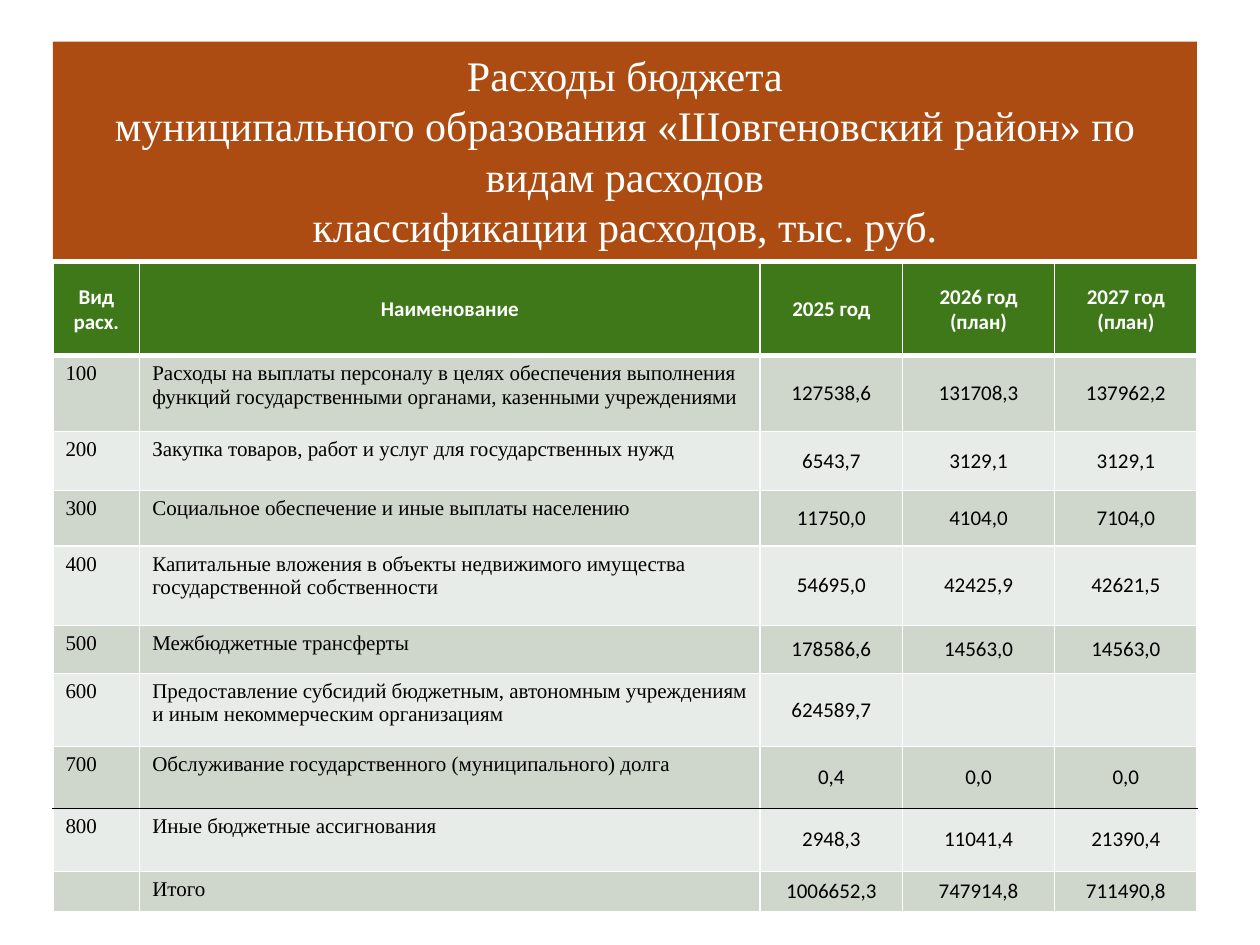
from dataclasses import dataclass

from lxml import etree
from pptx import Presentation
from pptx.dml.color import RGBColor
from pptx.enum.text import MSO_ANCHOR, MSO_AUTO_SIZE, PP_ALIGN
from pptx.oxml.ns import qn
from pptx.util import Inches, Pt

MIDDLE, TOP = MSO_ANCHOR.MIDDLE, MSO_ANCHOR.TOP
CENTER, LEFT = PP_ALIGN.CENTER, PP_ALIGN.LEFT
NO_AUTOFIT = MSO_AUTO_SIZE.NONE
TITLE_ONLY = 5


@dataclass(frozen=True)
class Theme:
    banner: str = "AD4C12"
    header: str = "3F7818"
    bands: tuple = ("CFD6CC", "E8ECE8")
    light: str = "FFFFFF"
    dark: str = "000000"
    serif: str = "Times New Roman"
    sans: str = "Calibri"
    title_size: int = 24
    table_size: int = 12
    thin: int = 1
    thick: int = 3


THEME = Theme()
HEADING = ("Расходы бюджета\vмуниципального образования «Шовгеновский район» "
           "по видам расходов\vклассификации расходов, тыс. руб.")
COLUMNS = ("Вид расх.", "Наименование", "2025 год", "2026 год\n(план)", "2027 год (план)")
EXPENSES = (
    ("100", "Расходы на выплаты персоналу в целях обеспечения выполнения функций "
            "государственными органами, казенными учреждениями",
     "127538,6", "131708,3", "137962,2"),
    ("200", "Закупка товаров, работ и услуг для государственных нужд",
     "6543,7", "3129,1", "3129,1"),
    ("300", "Социальное обеспечение и иные выплаты населению",
     "11750,0", "4104,0", "7104,0"),
    ("400", "Капитальные вложения в объекты недвижимого имущества "
            "государственной собственности",
     "54695,0", "42425,9", "42621,5"),
    ("500", "Межбюджетные трансферты", "178586,6", "14563,0", "14563,0"),
    ("600", "Предоставление субсидий бюджетным, автономным учреждениям "
            "и иным некоммерческим организациям",
     "624589,7", "", ""),
    ("700", "Обслуживание государственного (муниципального) долга", "0,4", "0,0", "0,0"),
    ("800", "Иные бюджетные ассигнования", "2948,3", "11041,4", "21390,4"),
    ("", "Итого", "1006652,3", "747914,8", "711490,8"),
)
COLUMN_WEIGHTS = (0.69, 4.93, 1.13, 1.21, 1.13)
ROW_WEIGHTS = (0.73, 0.6, 0.47, 0.44, 0.63, 0.38, 0.58, 0.49, 0.5, 0.32)
NAME_COLUMN = 1
RULED_ROW = 7


def apply(target, formats):
    for name, value in formats.items():
        setattr(target, name, value)


def paint(target, color):
    target.fill.solid()
    target.fill.fore_color.rgb = RGBColor.from_string(color)


def write(frame, text, align, color, **font):
    frame.text = text
    for paragraph in frame.paragraphs:
        paragraph.alignment = align
        for run in paragraph.runs:
            apply(run.font, font)
            run.font.color.rgb = RGBColor.from_string(color)
        if not paragraph.runs:
            end = paragraph._p.get_or_add_endParaRPr()
            end.set("sz", str(int(font["size"].pt * 100)))


def add_borders(cell, top, bottom, bottom_width):
    properties = cell._tc.get_or_add_tcPr()
    sides = (("lnL", THEME.light, THEME.thin), ("lnR", THEME.light, THEME.thin),
             ("lnT", top, THEME.thin), ("lnB", bottom, bottom_width))
    for position, (side, color, width) in enumerate(sides):
        line = etree.Element(qn(f"a:{side}"), w=str(Pt(width)))
        fill = etree.SubElement(line, qn("a:solidFill"))
        etree.SubElement(fill, qn("a:srgbClr"), val=color)
        properties.insert(position, line)


def place_heading(slide, box):
    heading = slide.shapes.title
    apply(heading, dict(zip(("left", "top", "width", "height"), box)))
    paint(heading, THEME.banner)
    frame = heading.text_frame
    apply(frame, {"word_wrap": True, "auto_size": NO_AUTOFIT, "vertical_anchor": MIDDLE})
    write(frame, HEADING, CENTER, THEME.light, name=THEME.serif, size=Pt(THEME.title_size))


def format_cell(cell, text, row, column):
    is_header = row == 0
    is_label = not is_header and column <= NAME_COLUMN
    paint(cell, THEME.header if is_header else THEME.bands[(row - 1) % 2])
    cell.vertical_anchor = TOP if is_label else MIDDLE
    write(cell.text_frame, text, LEFT if is_label else CENTER,
          THEME.light if is_header else THEME.dark,
          name=THEME.serif if is_label else THEME.sans,
          size=Pt(THEME.table_size), bold=is_header)
    add_borders(cell,
                THEME.dark if row == RULED_ROW + 1 else THEME.light,
                THEME.dark if row == RULED_ROW else THEME.light,
                THEME.thick if is_header else THEME.thin)


def place_expenses(slide, box):
    records = (COLUMNS, *EXPENSES)
    table = slide.shapes.add_table(len(records), len(COLUMNS), *box).table
    width, height = box[2:]
    for column, weight in zip(table.columns, COLUMN_WEIGHTS):
        column.width = int(width * weight / sum(COLUMN_WEIGHTS))
    for row, weight in zip(table.rows, ROW_WEIGHTS):
        row.height = int(height * weight / sum(ROW_WEIGHTS))
    for row, record in enumerate(records):
        for column, text in enumerate(record):
            format_cell(table.cell(row, column), text, row, column)


def main():
    deck = Presentation()
    apply(deck, {"slide_width": Inches(10), "slide_height": Inches(7.5)})
    slide = deck.slides.add_slide(deck.slide_layouts[TITLE_ONLY])

    def share(left, top, width, height):
        return (int(deck.slide_width * left), int(deck.slide_height * top),
                int(deck.slide_width * width), int(deck.slide_height * height))

    place_heading(slide, share(0.042, 0.044, 0.908, 0.23))
    place_expenses(slide, share(0.042, 0.279, 0.908, 0.686))
    deck.save("out.pptx")


if __name__ == "__main__":
    main()
